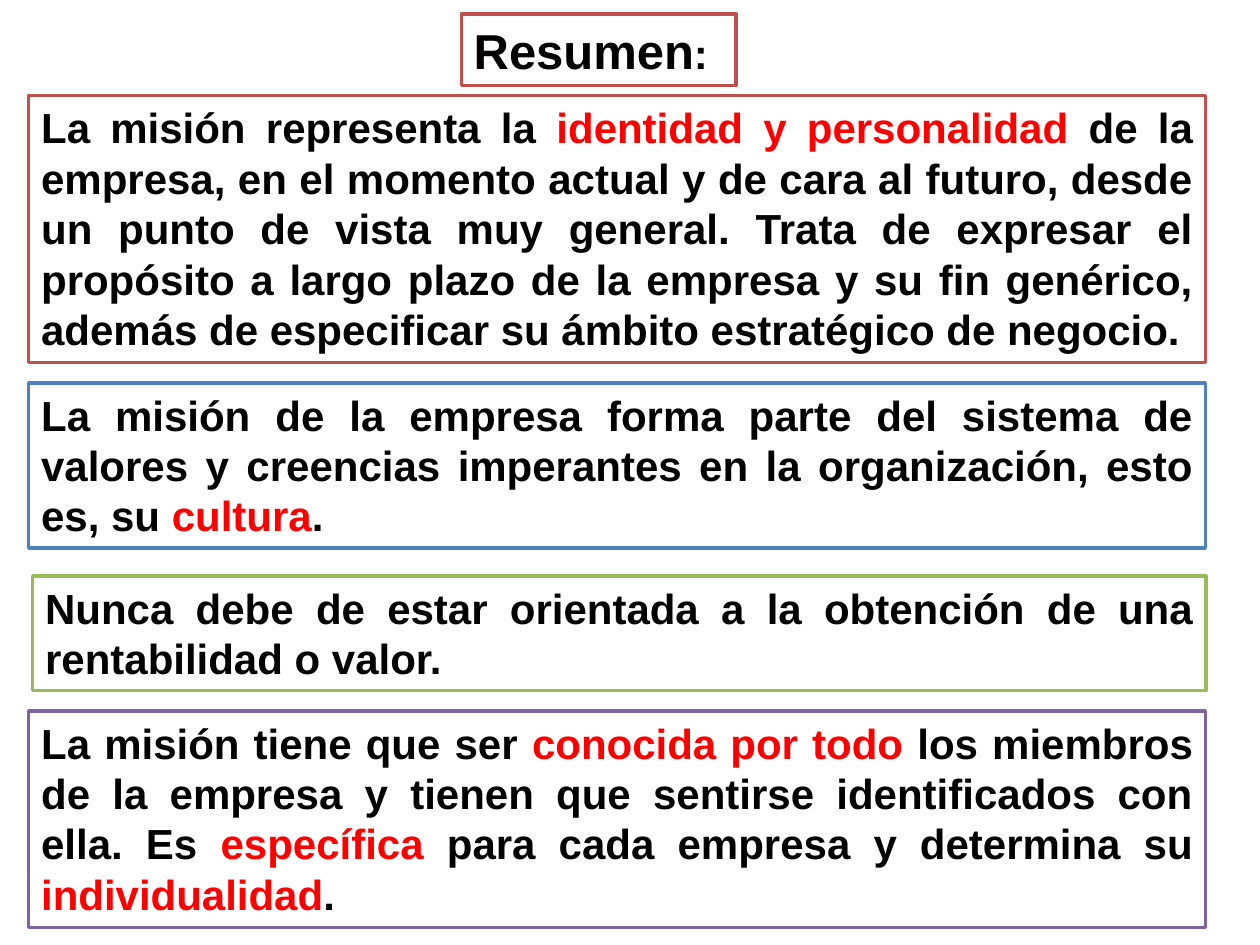
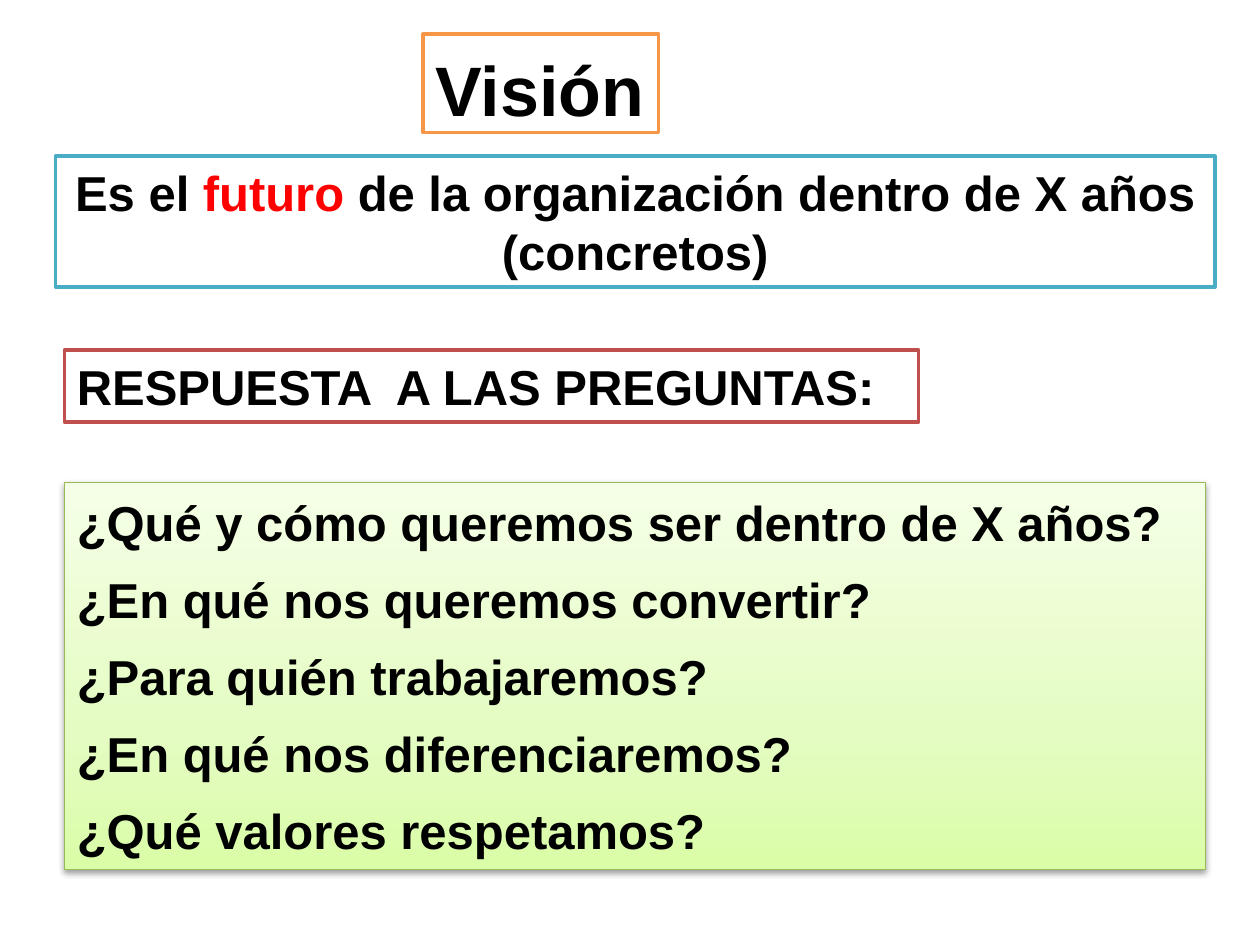
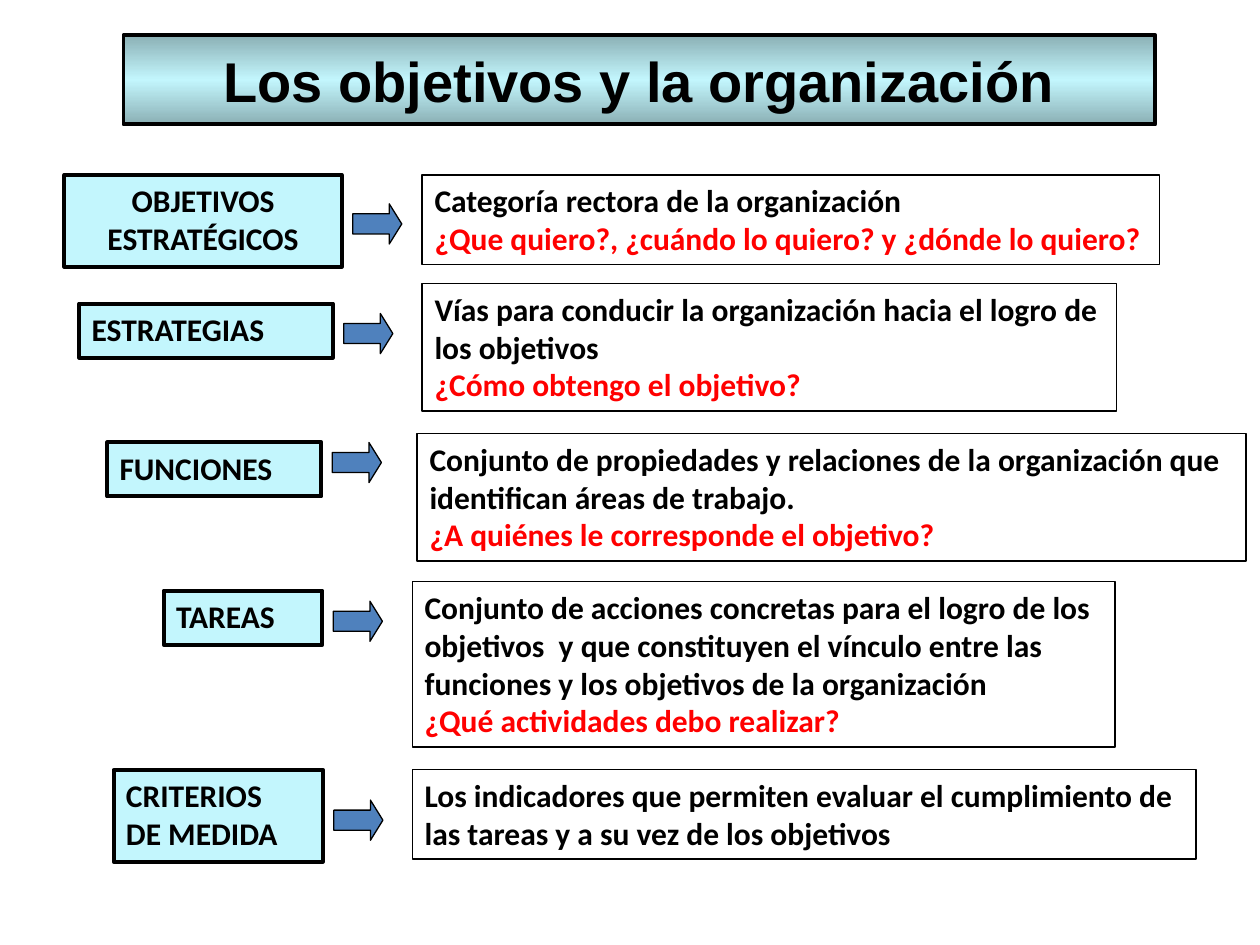
from lxml import etree
from pptx import Presentation
from pptx.dml.color import RGBColor
from pptx.enum.shapes import MSO_SHAPE
from pptx.enum.text import MSO_ANCHOR, MSO_AUTO_SIZE, PP_ALIGN
from pptx.oxml.ns import qn
from pptx.util import Cm, Pt

RECT, ARROW = MSO_SHAPE.RECTANGLE, MSO_SHAPE.RIGHT_ARROW
LEFT, CENTER, JUSTIFY = PP_ALIGN.LEFT, PP_ALIGN.CENTER, PP_ALIGN.JUSTIFY
TOP, MIDDLE = MSO_ANCHOR.TOP, MSO_ANCHOR.MIDDLE
GROW, FIXED = MSO_AUTO_SIZE.SHAPE_TO_FIT_TEXT, MSO_AUTO_SIZE.NONE

COLORS = {
    "white": "FFFFFF", "black": "000000", "key": "FF0000",
    "red": "C0504D", "blue": "4F81BD", "green": "9BBB59",
    "purple": "8064A2", "orange": "F79646", "aqua": "4BACC6",
    "pale": "C3F6FD", "steel": "8BB0B5", "leaf": "98B955",
    "lime": "DAFDA7", "lime_mid": "E4FCC2", "lime_light": "F5FFE7",
}
LIME_FADE = [(0, "lime"), (35, "lime_mid"), (100, "lime_light")]
STEEL_FADE = [(0, "steel"), (50, "pale"), (100, "steel")]
SPACED = {"line_spacing": 1.07, "space_after": Pt(8)}

# Text between bars is set in the key colour.
SUMMARY_TITLE = ((9.3, 0.28, 5.54, 1.45), "red", "Resumen")
SUMMARY = [
    ((0.58, 1.93, 23.72, 5.38), "red",
     "La misión representa la |identidad y personalidad| de la empresa, en el momento "
     "actual y de cara al futuro, desde un punto de vista muy general. Trata de expresar "
     "el propósito a largo plazo de la empresa y su fin genérico, además de especificar "
     "su ámbito estratégico de negocio."),
    ((0.58, 7.72, 23.72, 3.33), "blue",
     "La misión de la empresa forma parte del sistema de valores y creencias imperantes "
     "en la organización, esto es, su |cultura|."),
    ((0.66, 11.61, 23.65, 2.31), "green",
     "Nunca debe de estar orientada a la obtención de una rentabilidad o valor."),
    ((0.58, 14.33, 23.72, 4.37), "purple",
     "La misión tiene que ser |conocida por todo| los miembros de la empresa y tienen que "
     "sentirse identificados con ella. Es |específica| para cada empresa y determina su "
     "|individualidad|."),
]

QUESTIONS = [
    "¿Qué y cómo queremos ser dentro de X años?",
    "¿En qué nos queremos convertir?",
    "¿Para quién trabajaremos?",
    "¿En qué nos diferenciaremos?",
    "¿Qué valores respetamos?",
]
VISION = ["Es el |futuro| de la organización dentro de X años", "(concretos)"]

LEVELS = [
    ((1.3, 3.53, 5.59, 1.85), CENTER, ["OBJETIVOS", "ESTRATÉGICOS"], 4.11,
     (8.51, 3.53, 14.86, 1.8),
     ["Categoría rectora de la organización",
      "|¿Que quiero?, ¿cuándo lo quiero? y ¿dónde lo quiero?|"]),
    ((1.6, 6.12, 5.11, 1.09), LEFT, ["ESTRATEGIAS"], 6.32,
     (8.51, 5.72, 14, 2.57),
     ["Vías para conducir la organización hacia el logro de", "los objetivos",
      "|¿Cómo obtengo el objetivo?|"]),
    ((2.16, 8.92, 4.32, 1.09), LEFT, ["FUNCIONES"], 8.92,
     (8.41, 8.74, 16.71, 2.57),
     ["Conjunto de propiedades y relaciones de la organización que",
      "identifican áreas de trabajo.", "|¿A quiénes le corresponde el objetivo?|"]),
    ((3.3, 11.91, 3.2, 1.09), LEFT, ["TAREAS"], 12.12,
     (8.31, 11.73, 14.17, 3.33),
     ["Conjunto de acciones concretas para el logro de los",
      "objetivos  y que constituyen el vínculo entre las",
      "funciones y los objetivos de la organización",
      "|¿Qué actividades debo realizar?|"]),
    ((2.29, 15.52, 4.22, 1.85), LEFT, ["CRITERIOS", "DE MEDIDA"], 16.13,
     (8.31, 15.52, 15.8, 1.8),
     ["Los indicadores que permiten evaluar el cumplimiento de las tareas y a su vez "
      "de los objetivos"]),
]
ARROW_GAP, ARROW_W, ARROW_H = 0.22, 0.99, 0.81


def rgb(name):
    return RGBColor.from_string(COLORS[name])


def fade(sp, stops, angle):
    sp.fill.gradient()
    sp.fill.gradient_angle = angle
    gs_list = sp._element.spPr.find(qn("a:gradFill")).find(qn("a:gsLst"))
    for gs in list(gs_list):
        gs_list.remove(gs)
    for pos, name in stops:
        gs = etree.SubElement(gs_list, qn("a:gs"), pos=str(pos * 1000))
        etree.SubElement(gs, qn("a:srgbClr"), val=COLORS[name])


def drop_shadow(sp):
    effects = sp._element.spPr.find(qn("a:effectLst"))
    shadow = etree.SubElement(effects, qn("a:outerShdw"), blurRad="40000", dist="20000",
                              dir="5400000", rotWithShape="0")
    color = etree.SubElement(shadow, qn("a:srgbClr"), val=COLORS["black"])
    etree.SubElement(color, qn("a:alpha"), val="38000")


def add_shape(s, kind, at, fill, line, width):
    sp = s.shapes.add_shape(kind, *map(Cm, at))
    sp.shadow.inherit = False
    sp.fill.solid()
    sp.fill.fore_color.rgb = rgb(fill)
    sp.line.color.rgb = rgb(line)
    sp.line.width = Pt(width)
    return sp


def add_runs(p, text, size, font):
    for i, part in enumerate(text.split("|")):
        if part:
            r = p.add_run()
            r.text = part
            for name, value in {"size": Pt(size), "name": font, "bold": True}.items():
                setattr(r.font, name, value)
            r.font.color.rgb = rgb("key" if i % 2 else "black")


def add_box(s, at, line, lines, size, align=JUSTIFY, fill="white", width=2,
            font="Arial", spacing=None, anchor=TOP, fit=GROW):
    sp = add_shape(s, RECT, at, fill, line, width)
    tf = sp.text_frame
    for name, value in {"word_wrap": True, "auto_size": fit,
                        "vertical_anchor": anchor}.items():
        setattr(tf, name, value)
    for i, text in enumerate(lines):
        p = tf.add_paragraph() if i else tf.paragraphs[0]
        for name, value in {"alignment": align, **(spacing or {})}.items():
            setattr(p, name, value)
        add_runs(p, text, size, font)
    return sp


def build_summary(s):
    at, line, title = SUMMARY_TITLE
    sp = add_box(s, at, line, [title], 28, LEFT)
    add_runs(sp.text_frame.paragraphs[0], ":", 24, "Arial")
    for at, line, text in SUMMARY:
        add_box(s, at, line, [text], 24)


def build_vision(s):
    sp = add_box(s, (1.3, 9.73, 23.01, 7.8), "leaf", QUESTIONS, 28,
                 width=0.75, spacing=SPACED)
    fade(sp, LIME_FADE, 90)
    drop_shadow(sp)
    add_box(s, (8.53, 0.69, 4.75, 1.98), "orange", ["Visión"], 40, spacing=SPACED)
    add_box(s, (1.3, 7.06, 17.22, 1.45), "red", ["RESPUESTA  A LAS PREGUNTAS:"], 28, LEFT)
    add_box(s, (1.12, 3.15, 23.37, 2.64), "aqua", VISION, 28, CENTER)


def build_objectives(s):
    sp = add_box(s, (2.49, 0.71, 20.8, 1.8), "black", ["Los objetivos y la organización"],
                 32, CENTER, width=2.25, anchor=MIDDLE, fit=FIXED)
    fade(sp, STEEL_FADE, 270)
    for label_at, align, label, arrow_top, text_at, text in LEVELS:
        add_box(s, label_at, "black", label, 18, align, "pale", 2.25, "Calibri")
        arrow_left = label_at[0] + label_at[2] + ARROW_GAP
        arrow = add_shape(s, ARROW, (arrow_left, arrow_top, ARROW_W, ARROW_H),
                          "blue", "black", 0.75)
        arrow.adjustments[1] = 0.31
        add_box(s, text_at, "black", text, 18,
                JUSTIFY if len(text) > 1 else LEFT, width=0.75, font="Calibri")


def main():
    prs = Presentation()
    prs.slide_width, prs.slide_height = Cm(25.4), Cm(19.05)
    for build in (build_summary, build_vision, build_objectives):
        build(prs.slides.add_slide(prs.slide_layouts[6]))
    prs.save("out.pptx")


if __name__ == "__main__":
    main()
